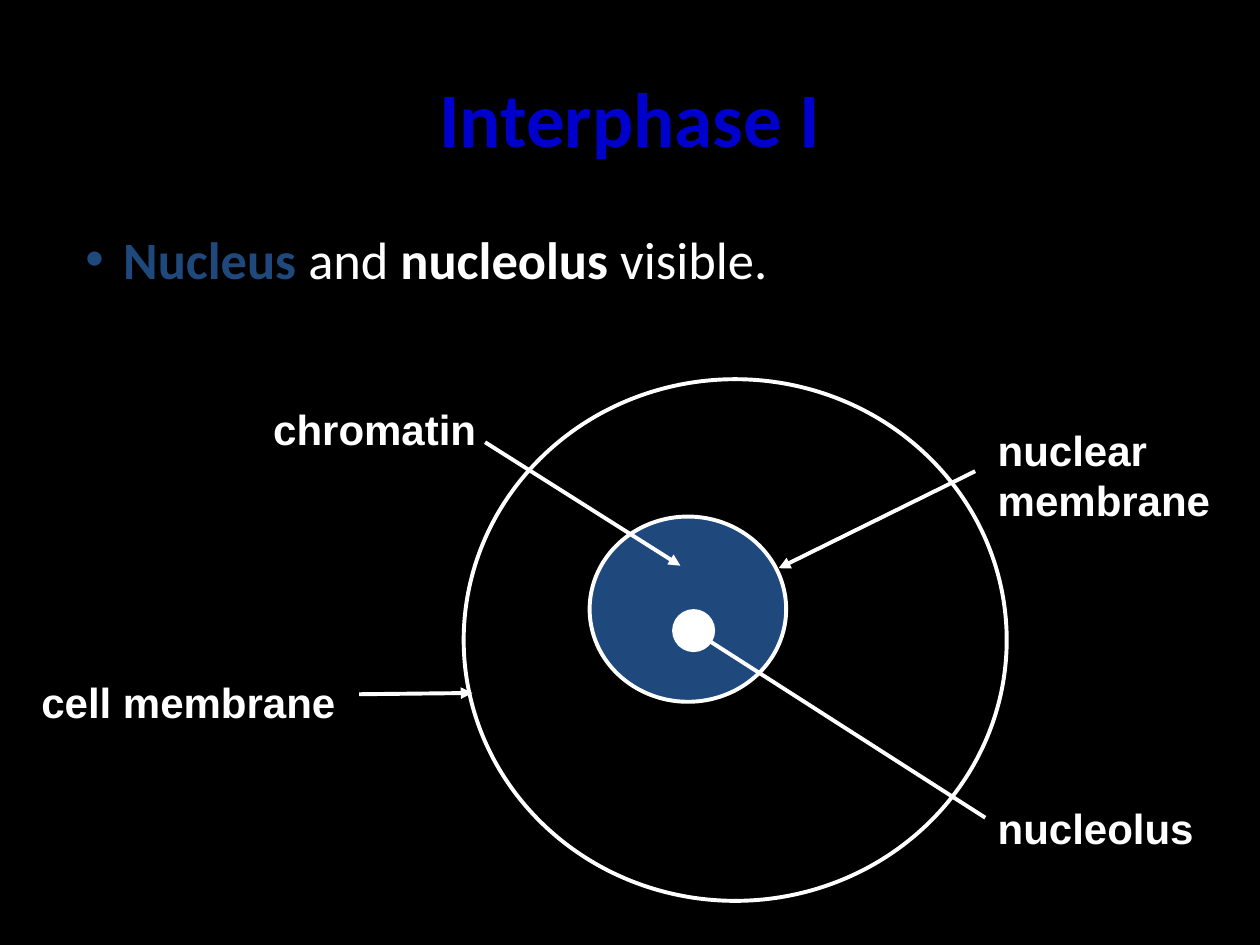
from lxml.etree import SubElement as add_element
from pptx import Presentation
from pptx.dml.color import RGBColor as Rgb
from pptx.enum.shapes import MSO_CONNECTOR as Link, MSO_SHAPE as Preset
from pptx.enum.text import MSO_ANCHOR as Anchor, MSO_AUTO_SIZE as Fit, PP_ALIGN as Align
from pptx.oxml.ns import qn
from pptx.util import Inches, Pt

COLORS = {"black": "000000", "white": "FFFFFF", "title": "0000CC", "nucleus": "1F497D"}
COLUMNS, ROWS = 100, 75

deck = Presentation()
deck.slide_width, deck.slide_height = Inches(10), Inches(7.5)
page = deck.slides.add_slide(deck.slide_layouts[6])
page.background.fill.solid()
page.background.fill.fore_color.rgb = Rgb.from_string(COLORS["black"])


def on_grid(*lengths):
    """Turn alternating columns and rows into slide lengths."""
    units = (deck.slide_width / COLUMNS, deck.slide_height / ROWS)
    return [round(length * units[i % 2]) for i, length in enumerate(lengths)]


def add_text(place, spans, frame_format, para_format):
    """Add a text box; each span is text, colour and font format."""
    box = page.shapes.add_textbox(*on_grid(*place))
    para = box.text_frame.paragraphs[0]
    for target, values in ((box.text_frame, frame_format), (para, para_format)):
        for name, value in values.items():
            setattr(target, name, value)
    for text, color, font_format in spans:
        span = para.add_run()
        span.text = text
        span.font.color.rgb = Rgb.from_string(COLORS[color])
        for name, value in font_format.items():
            setattr(span.font, name, value)
    return para


# Title
add_text((5, 3, 90, 12.5),
         [("Interphase I", "title", {"name": "Calibri", "size": Pt(44), "bold": True})],
         {"word_wrap": True, "vertical_anchor": Anchor.MIDDLE}, {"alignment": Align.CENTER})

# Bullet line
plain = {"name": "Calibri", "size": Pt(30), "bold": False}
strong = {**plain, "bold": True}
bullet = add_text((5, 17.5, 90, 49.5),
                  [("Nucleus", "nucleus", strong), (" and ", "white", plain),
                   ("nucleolus", "white", strong), (" visible.", "white", plain)],
                  {"word_wrap": True}, {"space_before": Pt(6)})
bullet_format = bullet._p.get_or_add_pPr()
bullet_format.set("marL", str(Inches(0.38)))
bullet_format.set("indent", str(Inches(-0.3)))
add_element(bullet_format, qn("a:buFont"), typeface="Arial")
add_element(bullet_format, qn("a:buChar"), char="•")

# Labels of the cell parts
label_font = {"name": "Arial", "size": Pt(24), "bold": True}
labels = [
    ("nuclear membrane", (78.2, 33.2, 21.8, 9.1), True),
    ("nucleolus", (78.2, 63.2, 17.7, 5), False),
    ("cell membrane", (2.3, 53.2, 25.6, 5), False),
    ("chromatin", (20.7, 31.5, 18.3, 5), False),
]
for text, place, wraps in labels:
    add_text(place, [(text, "white", label_font)],
             {"word_wrap": wraps, "auto_size": Fit.SHAPE_TO_FIT_TEXT}, {})

# Cell, nucleus and nucleolus
outlined = []
for place, color in [((36.8, 30.1, 43.1, 41.4), "black"),
                     ((46.8, 41, 15.6, 14.7), "nucleus"),
                     ((53.5, 48.5, 3.1, 3.1), "white")]:
    oval = page.shapes.add_shape(Preset.OVAL, *on_grid(*place))
    oval.shadow.inherit = False
    oval.fill.solid()
    oval.fill.fore_color.rgb = Rgb.from_string(COLORS[color])
    outlined.append(oval)

# Pointers from the labels to the parts
pointers = [
    ((28.5, 55.1, 37.5, 55), True),
    ((77.4, 37.4, 61.8, 45.1), True),
    ((78.2, 64.9, 55.1, 50.1), False),
    ((38.5, 35.1, 54, 44.9), True),
]
arrows = []
for ends, has_arrow in pointers:
    pointer = page.shapes.add_connector(Link.STRAIGHT, *on_grid(*ends))
    add_element(pointer._element.spPr, qn("a:effectLst"))
    outlined.append(pointer)
    if has_arrow:
        arrows.append(pointer)

# Common white outline, then arrowheads
for shape in outlined:
    shape.line.color.rgb = Rgb.from_string(COLORS["white"])
    shape.line.width = Pt(2.25)
for pointer in arrows:
    add_element(pointer.line._get_or_add_ln(), qn("a:tailEnd"), type="triangle")

deck.save("out.pptx")
